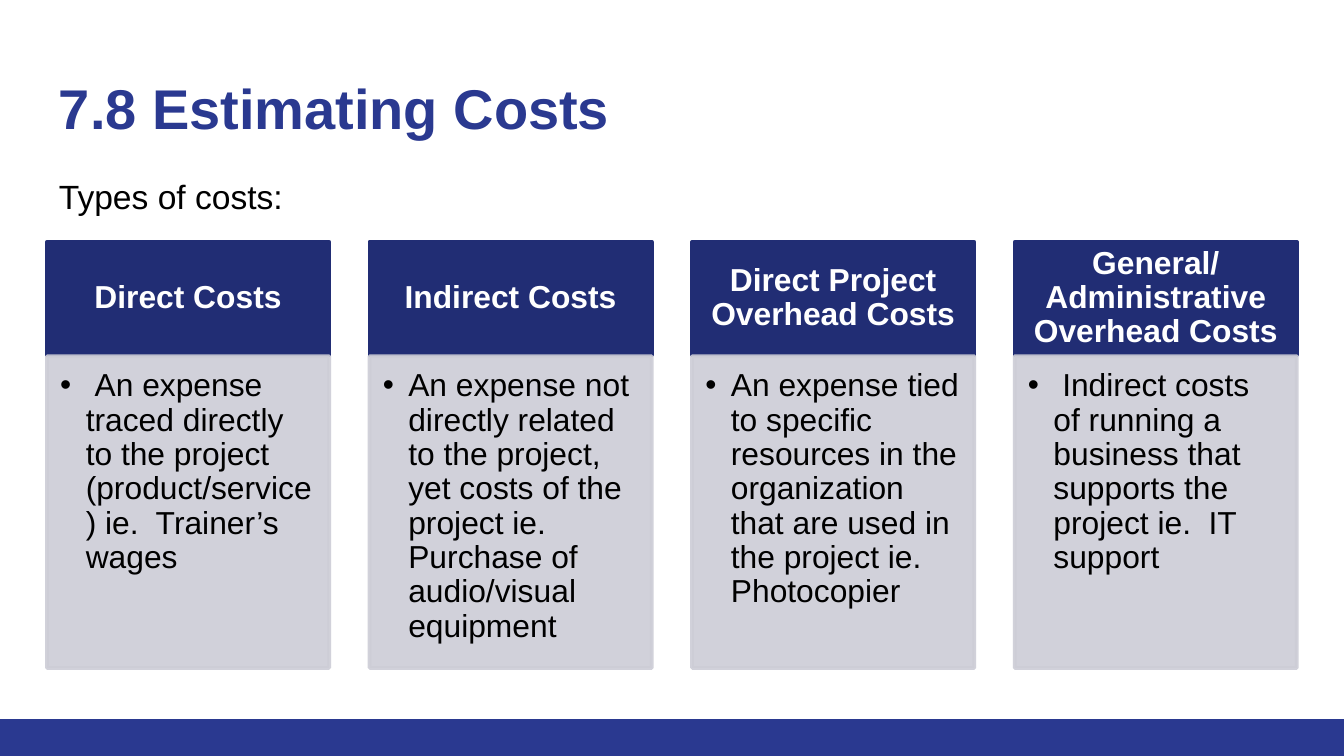
import pptx
import pptx.dml.color
import pptx.enum.shapes
import pptx.enum.text
import pptx.oxml.ns
import pptx.util
from lxml import etree
from pptx.util import Inches

FONT = "Arial"
COLORS = {
    "blue": "2A3990",
    "navy": "212D74",
    "gray": "CDCDD6",
    "white": "FFFFFF",
    "black": "000000",
}
# Each cost type: header, then the (text, bold) runs of its description
COSTS = [
    ("Direct Costs",
     [(" ", True),
      ("An expense traced directly to the project (product/service) ie.  Trainer’s wages",
       False)]),
    ("Indirect Costs",
     [("An expense not directly related to the project, yet costs of the project ie. "
       "Purchase of audio/visual equipment", False)]),
    ("Direct Project Overhead Costs",
     [("An expense tied to specific resources in the organization that are used "
       "in the project ie. Photocopier", False)]),
    ("General/Administrative Overhead Costs",
     [(" ", True),
      ("Indirect costs of running a business that supports the project ie.  IT support",
       False)]),
]
LEFT, PITCH, WIDTH = 0.35, 2.4, 2.1
HEAD_TOP, HEAD_HEIGHT = 1.8, 0.84
BODY_TOP, BODY_HEIGHT = 2.65, 2.32


def rgb(name):
    return pptx.dml.color.RGBColor.from_string(COLORS[name])


def add_run(p, text, size, color, bold=False):
    r = p.add_run()
    r.text = text
    r.font.name = FONT
    r.font.size = pptx.util.Pt(size)
    r.font.bold = bold
    r.font.color.rgb = rgb(color)


def set_margins(tf, left, top, right, bottom):
    tf.margin_left, tf.margin_top = Inches(left), Inches(top)
    tf.margin_right, tf.margin_bottom = Inches(right), Inches(bottom)


def add_rect(s, left, top, width, height, color, outlined=True):
    sp = s.shapes.add_shape(pptx.enum.shapes.MSO_SHAPE.RECTANGLE, Inches(left),
                            Inches(top), Inches(width), Inches(height))
    sp.shadow.inherit = False
    sp.fill.solid()
    sp.fill.fore_color.rgb = rgb(color)
    if outlined:
        sp.line.color.rgb = rgb(color)
        sp.line.width = pptx.util.Pt(2)
    else:
        sp.line.fill.background()
    return sp


def set_opacity(sp, percent):
    """Apply the opacity to both fill and outline."""
    for color in sp._element.spPr.iter(pptx.oxml.ns.qn("a:srgbClr")):
        alpha = etree.SubElement(color, pptx.oxml.ns.qn("a:alpha"))
        alpha.set("val", str(percent * 1000))


def add_bullet(p, indent):
    pPr = p._p.get_or_add_pPr()
    pPr.set("marL", str(Inches(indent)))
    pPr.set("indent", str(-Inches(indent)))
    etree.SubElement(pPr, pptx.oxml.ns.qn("a:buFont")).set("typeface", FONT)
    etree.SubElement(pPr, pptx.oxml.ns.qn("a:buChar")).set("char", "•")


def add_label(s, left, top, width, height, text, size, color, bold=False, wrap=True):
    tf = s.shapes.add_textbox(Inches(left), Inches(top),
                              Inches(width), Inches(height)).text_frame
    tf.word_wrap = wrap
    add_run(tf.paragraphs[0], text, size, color, bold)
    return tf


def add_cost_header(s, left, text):
    sp = add_rect(s, left, HEAD_TOP, WIDTH, HEAD_HEIGHT, "navy")
    tf = sp.text_frame
    tf.word_wrap = True
    tf.vertical_anchor = pptx.enum.text.MSO_ANCHOR.MIDDLE
    set_margins(tf, 0.13, 0.08, 0.13, 0.08)
    p = tf.paragraphs[0]
    p.alignment = pptx.enum.text.PP_ALIGN.CENTER
    p.line_spacing = 0.9
    add_run(p, text, 17, "white", bold=True)


def add_cost_body(s, left, runs):
    sp = add_rect(s, left, BODY_TOP, WIDTH, BODY_HEIGHT, "gray")
    set_opacity(sp, 90)
    tf = sp.text_frame
    tf.word_wrap = True
    tf.vertical_anchor = pptx.enum.text.MSO_ANCHOR.TOP
    set_margins(tf, 0.1, 0.1, 0.11, 0.15)
    p = tf.paragraphs[0]
    add_bullet(p, 0.19)
    p.alignment = pptx.enum.text.PP_ALIGN.LEFT
    p.line_spacing = 0.9
    for text, bold in runs:
        add_run(p, text, 17, "black", bold)


def main():
    prs = pptx.Presentation()
    prs.slide_width = Inches(10)
    prs.slide_height = prs.slide_width * 9 // 16
    s = prs.slides.add_slide(prs.slide_layouts[6])

    add_rect(s, 0, 5.35, 10, 0.28, "blue", outlined=False)
    title = add_label(s, 0.34, 0.45, 9.32, 0.66, "7.8 Estimating Costs", 30, "blue", bold=True)
    set_margins(title, 0.1, 0.1, 0.1, 0.1)
    for i, (name, description) in enumerate(COSTS):
        left = LEFT + i * PITCH
        add_cost_header(s, left, name)
        add_cost_body(s, left, description)
    add_label(s, 0.34, 1.26, 1.9, 0.4, "Types of costs:", 18, "black", wrap=False)

    prs.save("out.pptx")


if __name__ == "__main__":
    main()
